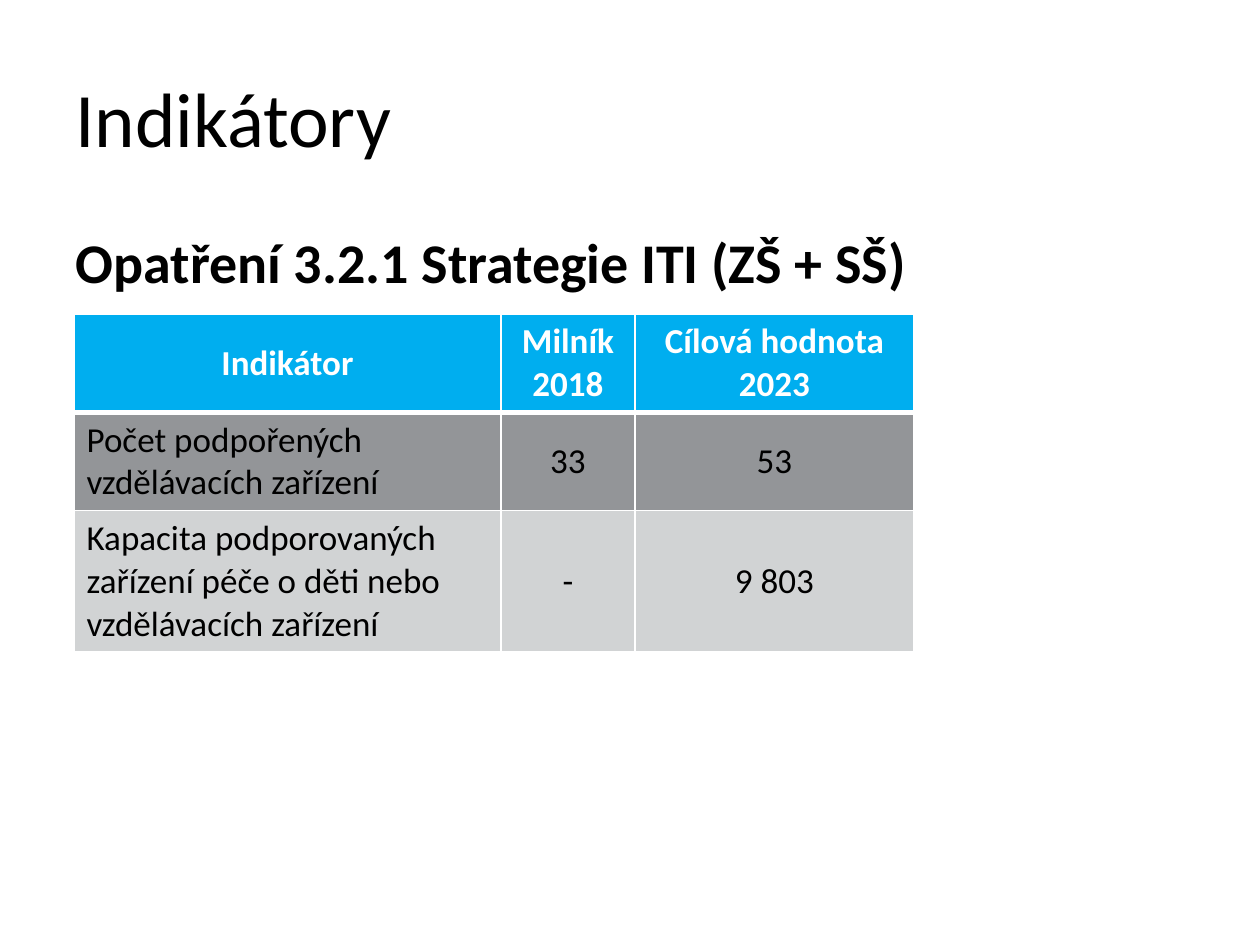
"""Build the indicator slide with its heading and target table."""
from dataclasses import dataclass

from lxml.etree import SubElement
from pptx import Presentation
from pptx.dml.color import RGBColor
from pptx.enum.text import MSO_ANCHOR as Anchor, PP_ALIGN as Align
from pptx.oxml.ns import qn
from pptx.util import Emu, Pt

PX_PER_INCH = 126
FONT = "Calibri"
BLACK = RGBColor(0x00, 0x00, 0x00)
WHITE = RGBColor(0xFF, 0xFF, 0xFF)
BLUE = RGBColor(0x00, 0xAE, 0xEF)
DARK_GRAY = RGBColor(0x93, 0x95, 0x98)
LIGHT_GRAY = RGBColor(0xD1, 0xD3, 0xD4)


@dataclass(frozen=True)
class Box:
    left: int
    top: int
    width: int
    height: int


@dataclass(frozen=True)
class IndicatorRow:
    texts: tuple[str, ...]
    height: int
    fill: RGBColor
    header: bool = False


TITLE_BOX = Box(63, 38, 1134, 158)
BODY_BOX = Box(63, 221, 1134, 624)
TABLE_BOX = Box(74, 314, 840, 337)
COLUMN_WIDTHS = (427, 134, 279)
ROWS = (
    IndicatorRow(("Indikátor", "Milník 2018", "Cílová hodnota 2023"), 98, BLUE, True),
    IndicatorRow(("Počet podpořených vzdělávacích zařízení", "33", "53"), 98, DARK_GRAY),
    IndicatorRow(
        ("Kapacita podporovaných zařízení péče o děti nebo vzdělávacích zařízení", "-", "9 803"),
        141,
        LIGHT_GRAY,
    ),
)


def px(value: int) -> Emu:
    """Convert pixels to EMU."""
    return Emu(round(value * 914400 / PX_PER_INCH))


def write(tf, text: str, size: int, color: RGBColor, bold: bool, align: Align) -> None:
    """Put one formatted paragraph in a text frame."""
    tf.text = text
    p = tf.paragraphs[0]
    p.alignment = align
    font = p.runs[0].font
    font.name, font.size, font.bold = FONT, Pt(size), bold
    font.color.rgb = color


def fill_placeholder(sp, box: Box, text: str, size: int, bold: bool) -> None:
    """Move a placeholder and give it left-aligned black text."""
    sp.left, sp.top = px(box.left), px(box.top)
    sp.width, sp.height = px(box.width), px(box.height)
    write(sp.text_frame, text, size, BLACK, bold, Align.LEFT)


def remove_bullet(p) -> None:
    """Drop the bullet and hanging indent of a paragraph."""
    pPr = p._p.get_or_add_pPr()
    pPr.set("marL", "0")
    pPr.set("indent", "0")
    SubElement(pPr, qn("a:buNone"))


def add_borders(cell, widths: dict[str, int]) -> None:
    """Draw white cell borders with the given widths in points."""
    tcPr = cell._tc.get_or_add_tcPr()
    for side, width in widths.items():
        ln = SubElement(tcPr, qn(f"a:ln{side}"), w=str(Pt(width)))
        fill = SubElement(ln, qn("a:solidFill"))
        SubElement(fill, qn("a:srgbClr"), val=str(WHITE))


def add_indicator_table(s, box: Box, rows: tuple[IndicatorRow, ...]) -> None:
    """Add the table of indicators."""
    table = s.shapes.add_table(
        len(rows), len(COLUMN_WIDTHS),
        px(box.left), px(box.top), px(box.width), px(box.height),
    ).table
    for column, width in zip(table.columns, COLUMN_WIDTHS):
        column.width = px(width)
    for i, row in enumerate(rows):
        table.rows[i].height = px(row.height)
        top = 3 if i and rows[i - 1].header else 1
        bottom = 3 if row.header else 1
        for j, text in enumerate(row.texts):
            cell = table.cell(i, j)
            align = Align.CENTER if row.header or j else Align.LEFT
            color = WHITE if row.header else BLACK
            write(cell.text_frame, text, 20, color, row.header, align)
            cell.vertical_anchor = Anchor.MIDDLE
            add_borders(cell, {"L": 1, "R": 1, "T": top, "B": bottom})
            cell.fill.solid()
            cell.fill.fore_color.rgb = row.fill


def main() -> None:
    """Create and save the presentation."""
    prs = Presentation()
    prs.slide_width, prs.slide_height = px(1260), px(945)
    s = prs.slides.add_slide(prs.slide_layouts[1])
    fill_placeholder(s.shapes.title, TITLE_BOX, "Indikátory", 44, False)
    body = s.placeholders[1]
    fill_placeholder(body, BODY_BOX, "Opatření 3.2.1 Strategie ITI (ZŠ + SŠ)", 32, True)
    remove_bullet(body.text_frame.paragraphs[0])
    add_indicator_table(s, TABLE_BOX, ROWS)
    prs.save("out.pptx")


if __name__ == "__main__":
    main()
